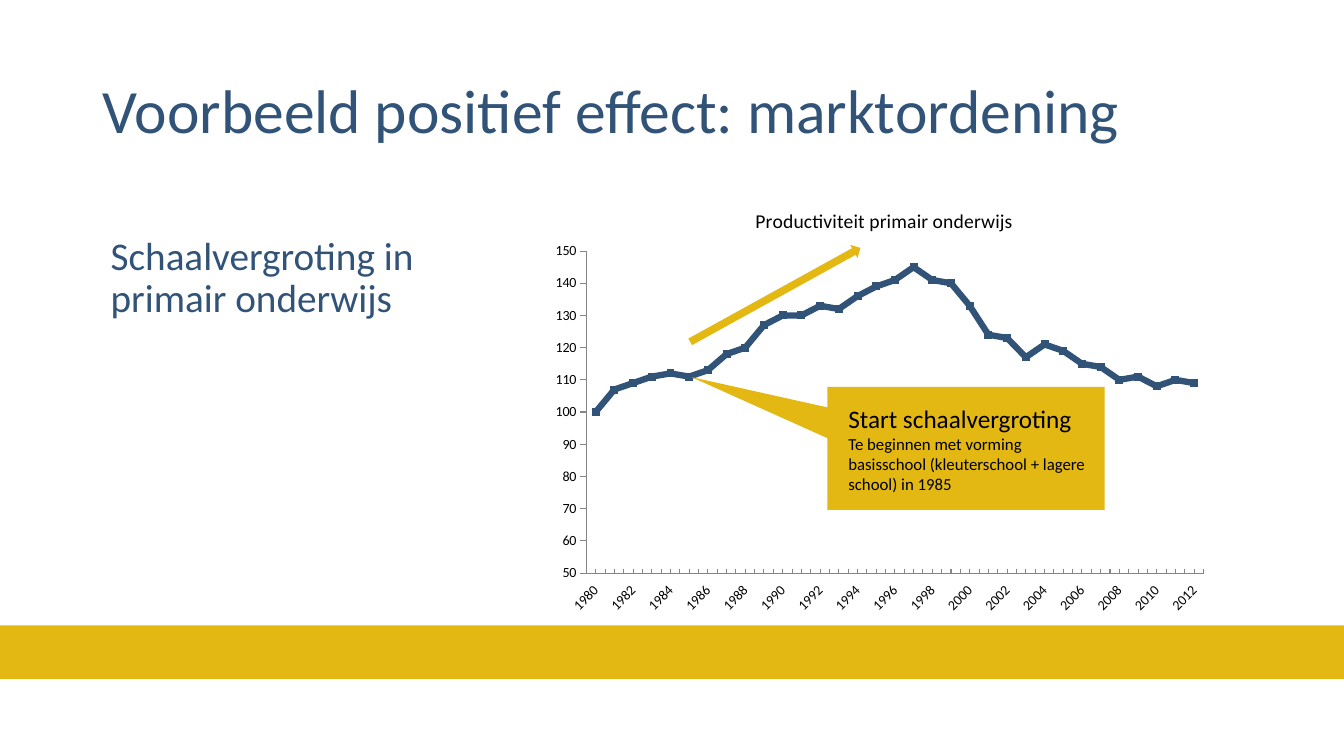
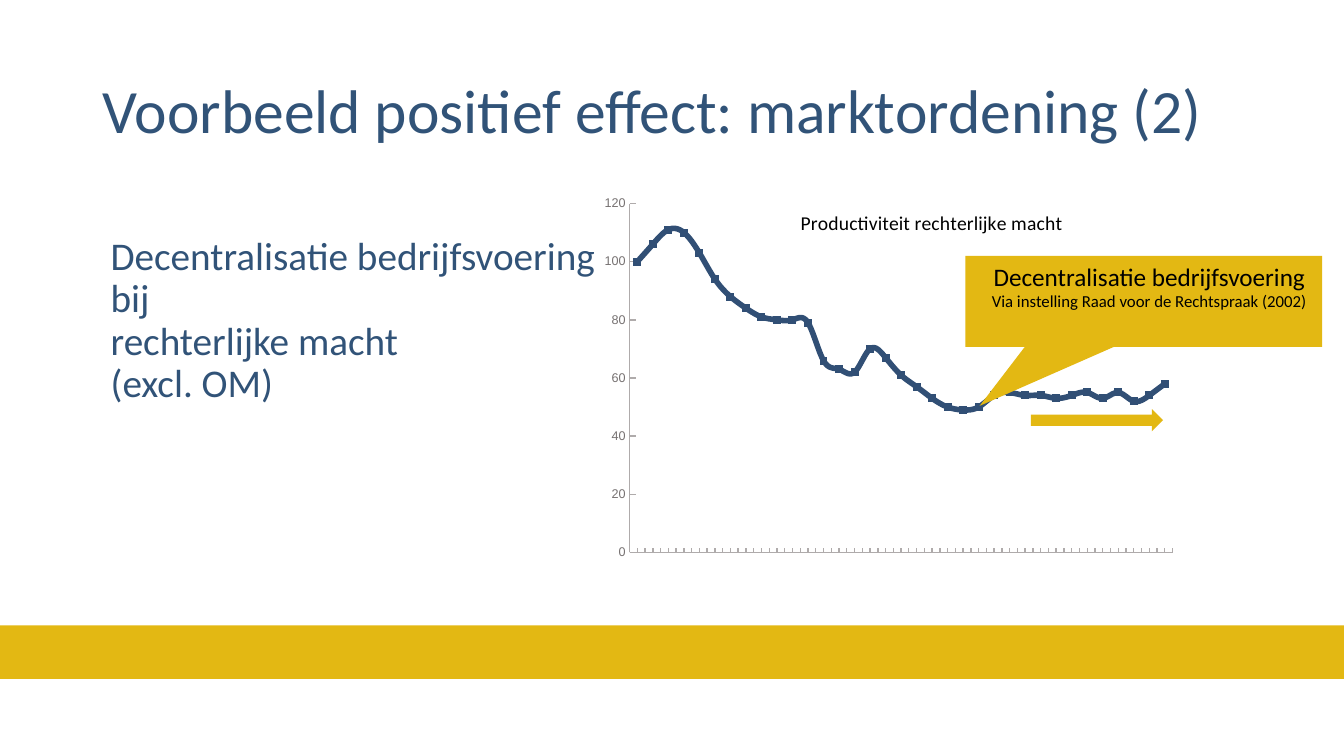
from lxml import etree
from pptx import Presentation
from pptx.chart.data import CategoryChartData
from pptx.dml.color import RGBColor
from pptx.enum.chart import XL_CHART_TYPE, XL_TICK_LABEL_POSITION, XL_TICK_MARK
from pptx.enum.shapes import MSO_SHAPE
from pptx.enum.text import MSO_ANCHOR, PP_ALIGN
from pptx.oxml.ns import qn
from pptx.util import Cm, Pt

NAVY = RGBColor(0x31, 0x53, 0x78)
NAVY_DARK = RGBColor(0x31, 0x4F, 0x75)
GOLD = RGBColor(0xE3, 0xB8, 0x13)
BLACK = RGBColor(0, 0, 0)
GREY = RGBColor(0x76, 0x71, 0x71)
GREY_LINE = RGBColor(0xAF, 0xAB, 0xAB)
AXIS_LINE = RGBColor(0x86, 0x86, 0x86)
FONT = "Calibri"
RECT, ARROW, CALLOUT = MSO_SHAPE.RECTANGLE, MSO_SHAPE.RIGHT_ARROW, MSO_SHAPE.RECTANGULAR_CALLOUT
LEFT, CENTER = PP_ALIGN.LEFT, PP_ALIGN.CENTER
TOP, MIDDLE = MSO_ANCHOR.TOP, MSO_ANCHOR.MIDDLE
LINE = XL_CHART_TYPE.LINE
TICK_NONE, TICK_IN, TICK_OUT = XL_TICK_MARK.NONE, XL_TICK_MARK.INSIDE, XL_TICK_MARK.OUTSIDE
LABELS_LOW, LABELS_NONE = XL_TICK_LABEL_POSITION.LOW, XL_TICK_LABEL_POSITION.NONE

EDUCATION = [100, 107, 109, 111, 112, 111, 113, 118, 120, 127, 130, 130, 133, 132, 136, 139, 141,
             145, 141, 140, 133, 124, 123, 117, 121, 119, 115, 114, 110, 111, 108, 110, 109]
JUDICIARY = [100, 106, 111, 110, 103, 94, 88, 84, 81, 80, 80, 79, 66, 63, 62, 70, 67, 61, 57, 53,
             50, 49, 50, 54, 55, 54, 54, 53, 54, 55, 53, 55, 52, 54, 58]


class Deck:
    """Holds the house style and the slide being built."""

    def __init__(self):
        self.prs = Presentation()
        self.prs.slide_width, self.prs.slide_height = Cm(33.87), Cm(19.05)
        self.s = None

    def slide(self, title, body, body_width):
        self.s = self.prs.slides.add_slide(self.prs.slide_layouts[6])
        self.shape(RECT, 0, 15.76, 33.87, 1.35)
        self.text(title, 44, 2.33, 1.02, 29.21, 3.68, MIDDLE)
        self.text(body, 28, 2.54, 5.84, body_width, 7.44, TOP)

    def run(self, p, text, size, color):
        r = p.add_run()
        r.text = text
        r.font.name, r.font.size, r.font.color.rgb = FONT, Pt(size), color

    def text(self, text, size, x, y, w, h, anchor):
        tf = self.s.shapes.add_textbox(Cm(x), Cm(y), Cm(w), Cm(h)).text_frame
        tf.word_wrap, tf.vertical_anchor = True, anchor
        p = tf.paragraphs[0]
        p.line_spacing = 0.9
        for i, line in enumerate(text.split("\n")):
            if i:
                p.add_line_break()
            self.run(p, line, size, NAVY)

    def shape(self, kind, x, y, w, h, rotation=0):
        sp = self.s.shapes.add_shape(kind, Cm(x), Cm(y), Cm(w), Cm(h))
        sp.shadow.inherit = False
        sp.fill.solid()
        sp.fill.fore_color.rgb = GOLD
        sp.line.fill.background()
        sp.rotation = rotation
        return sp

    def callout(self, heading, detail, x, y, w, h, tip, align, anchor):
        sp = self.shape(CALLOUT, x, y, w, h)
        sp.adjustments[0], sp.adjustments[1] = tip
        tf = sp.text_frame
        tf.word_wrap, tf.vertical_anchor = True, anchor
        for i, (text, size) in enumerate([(heading, 18), (detail, 12)]):
            p = tf.add_paragraph() if i else tf.paragraphs[0]
            p.alignment = align
            p._p.get_or_add_pPr().set("marL", str(Cm(0.28)))
            self.run(p, text, size, BLACK)

    def layout(self, parent, index, **position):
        for old in parent.findall(qn("c:layout")):
            parent.remove(old)
        layout = etree.Element(qn("c:layout"))
        manual = etree.SubElement(layout, qn("c:manualLayout"))
        for tag, value in position.items():
            etree.SubElement(manual, qn("c:" + tag)).set("val", str(value))
        parent.insert(index, layout)

    def axis(self, axis, font, size, color, line, width, major, minor):
        axis.has_major_gridlines = False
        axis.major_tick_mark, axis.minor_tick_mark = major, minor
        f = axis.tick_labels.font
        f.name, f.size, f.color.rgb = font, Pt(size), color
        axis.format.line.color.rgb, axis.format.line.width = line, Pt(width)

    def chart(self, title, title_at, values, box, plot, scale, color, width, smooth,
              axis_style, value_tick, labels):
        data = CategoryChartData()
        data.categories = [str(1980 + i) for i in range(len(values))]
        data.add_series("Series 1", values)
        chart = self.s.shapes.add_chart(LINE, *(Cm(v) for v in box), data).chart
        chart.has_legend = False
        chart.font.name, chart.font.size, chart.font.color.rgb = FONT, Pt(10), BLACK
        chart.has_title = True
        p = chart.chart_title.text_frame.paragraphs[0]
        self.run(p, title, 14, BLACK)
        p.runs[0].font.bold = False
        head = chart.chart_title._element
        self.layout(head, 1, xMode="edge", yMode="edge", x=title_at[0], y=title_at[1])
        head.find(qn("c:overlay")).set("val", "1")
        x, y, w, h = plot
        self.layout(chart._chartSpace.chart.plotArea, 0, layoutTarget="inner",
                    xMode="edge", yMode="edge", x=x, y=y, w=w, h=h)
        chart.plots[0].vary_by_categories = False
        series = chart.plots[0].series[0]
        series.smooth = smooth
        series.marker.style = None
        series.format.line.color.rgb, series.format.line.width = color, Pt(width)
        va, ca = chart.value_axis, chart.category_axis
        va.minimum_scale, va.maximum_scale, va.major_unit = scale
        self.axis(va, *axis_style, value_tick, TICK_NONE)
        self.axis(ca, *axis_style, TICK_NONE, TICK_IN)
        ca.tick_label_position = labels
        el = ca._element
        el.find(qn("c:txPr")).find(qn("a:bodyPr")).set("rot", "-2700000")
        skip = etree.Element(qn("c:tickLblSkip"))
        skip.set("val", "2")
        el.find(qn("c:noMultiLvlLbl")).addprevious(skip)


def main():
    d = Deck()
    d.slide("Voorbeeld positief effect: marktordening", "Schaalvergroting in primair onderwijs", 9.17)
    d.chart("Productiviteit primair onderwijs", (0.31, 0.04), EDUCATION, (13.67, 4.7, 17.02, 10.85),
            (0.065, 0.15, 0.914, 0.748), (50, 150, 10), NAVY, 4.5, False,
            (FONT, 10, BLACK, AXIS_LINE, 0.75), TICK_OUT, LABELS_LOW)
    d.callout("Start schaalvergroting",
              "Te beginnen met vorming basisschool (kleuterschool + lagere school) in 1985",
              20.85, 9.75, 6.99, 3.1, (-0.99, -0.58), LEFT, MIDDLE)
    d.shape(ARROW, 17.09, 7.24, 4.9, 0.38, 331.1)

    d.slide("Voorbeeld positief effect: marktordening (2)",
            "Decentralisatie bedrijfsvoering bij\nrechterlijke macht\n(excl. OM)", 12.7)
    d.chart("Productiviteit rechterlijke macht", (0.345, 0.04), JUDICIARY, (14.83, 4.78, 15.24, 9.96),
            (0.068, 0.035, 0.898, 0.883), (0, 120, 20), NAVY_DARK, 4, True,
            ("Arial", 9, GREY, GREY_LINE, 1), TICK_IN, LABELS_NONE)
    d.shape(ARROW, 25.98, 10.31, 3.33, 0.56)
    d.callout("Decentralisatie bedrijfsvoering", "Via instelling Raad voor de Rechtspraak (2002)",
              24.33, 6.45, 8.99, 2.29, (-0.46, 1.15), CENTER, TOP)
    d.prs.save("out.pptx")


if __name__ == "__main__":
    main()
